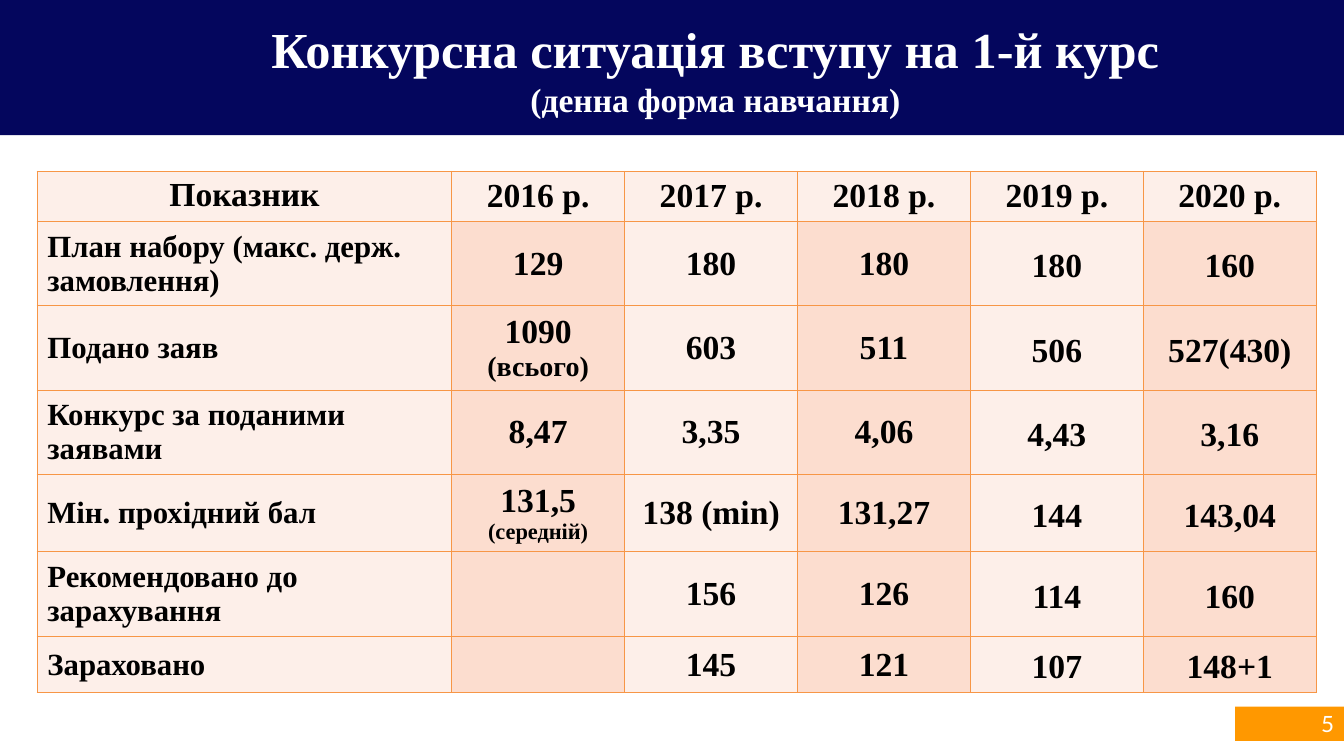
from dataclasses import dataclass

from lxml import etree
from pptx import Presentation
from pptx.dml.color import RGBColor
from pptx.enum.shapes import MSO_SHAPE
from pptx.enum.text import MSO_ANCHOR, PP_ALIGN
from pptx.oxml.ns import qn
from pptx.util import Inches, Pt

LEFT, CENTER, RIGHT = PP_ALIGN.LEFT, PP_ALIGN.CENTER, PP_ALIGN.RIGHT
TOP, MIDDLE = MSO_ANCHOR.TOP, MSO_ANCHOR.MIDDLE
RECT = MSO_SHAPE.RECTANGLE

NAVY = RGBColor(0x04, 0x06, 0x5D)
AMBER = RGBColor(0xFF, 0x98, 0x00)
ORANGE = RGBColor(0xF7, 0x96, 0x46)
PALE = RGBColor(0xFD, 0xEF, 0xE9)
PEACH = RGBColor(0xFC, 0xDD, 0xCF)
WHITE = RGBColor(0xFF, 0xFF, 0xFF)
BLACK = RGBColor(0, 0, 0)
SERIF, SANS = "Times New Roman", "Lato"


@dataclass
class Box:
    left: float
    top: float
    width: float
    height: float

    def place(self) -> tuple:
        return tuple(map(Inches, (self.left, self.top, self.width, self.height)))


@dataclass
class Row:
    label: str
    height: float
    values: tuple[str, ...]
    note: str = ""
    small: int = 20


HEAD = ("Показник", "2016 р.", "2017 р.", "2018 р.", "2019 р.", "2020 р.")
HEAD_HEIGHT = 0.5
WIDTHS = [4.11] + [1.715] * 5
ROWS = [
    Row("План набору (макс. держ. замовлення)", 0.83,
        ("129", "180", "180", "180", "160")),
    Row("Подано заяв", 0.84,
        ("1090", "603", "511", "506", "527(430)"), "(всього)"),
    Row("Конкурс за поданими заявами", 0.83,
        ("8,47", "3,35", "4,06", "4,43", "3,16")),
    Row("Мін. прохідний бал", 0.76,
        ("131,5", "138 (min)", "131,27", "144", "143,04"), "(середній)", 16),
    Row("Рекомендовано до зарахування", 0.84,
        ("", "156", "126", "114", "160")),
    Row("Зараховано", 0.56,
        ("", "145", "121", "107", "148+1")),
]


def write(frame, text: str, *, size: float = 24, font: str = SERIF,
          color: RGBColor = BLACK, bold: bool = True, align=CENTER,
          spacing: float | None = None, more: bool = False) -> None:
    """Fill the first paragraph, or add another one when more is set."""
    para = frame.add_paragraph() if more else frame.paragraphs[0]
    para.alignment = align
    if spacing:
        para.line_spacing = spacing
    run = para.add_run()
    run.text = text
    run.font.size = Pt(size)
    run.font.name = font
    run.font.bold = bold
    run.font.color.rgb = color


def add_bar(slide, box: Box, color: RGBColor) -> None:
    bar = slide.shapes.add_shape(RECT, *box.place())
    bar.shadow.inherit = False
    bar.fill.solid()
    bar.fill.fore_color.rgb = color
    bar.line.fill.background()


def add_frame(slide, box: Box, anchor):
    frame = slide.shapes.add_textbox(*box.place()).text_frame
    frame.word_wrap = True
    frame.vertical_anchor = anchor
    return frame


def style_cell(cell, color: RGBColor, anchor=MIDDLE) -> None:
    """Set the anchor, the four borders and the fill."""
    cell.vertical_anchor = anchor
    props = cell._tc.get_or_add_tcPr()
    for side in ("a:lnL", "a:lnR", "a:lnT", "a:lnB"):
        line = etree.SubElement(props, qn(side), w=str(Pt(1)))
        fill = etree.SubElement(line, qn("a:solidFill"))
        etree.SubElement(fill, qn("a:srgbClr"), val=str(ORANGE))
    cell.fill.solid()
    cell.fill.fore_color.rgb = color


def add_grid(slide, box: Box) -> None:
    grid = slide.shapes.add_table(len(ROWS) + 1, len(HEAD), *box.place()).table
    grid.first_row = grid.horz_banding = False
    for col, width in zip(grid.columns, WIDTHS):
        col.width = Inches(width)
    grid.rows[0].height = Inches(HEAD_HEIGHT)
    for c, text in enumerate(HEAD):
        cell = grid.cell(0, c)
        style_cell(cell, PALE, MIDDLE if c else TOP)
        write(cell.text_frame, text)
    for r, row in enumerate(ROWS, 1):
        grid.rows[r].height = Inches(row.height)
        for c, text in enumerate((row.label, *row.values)):
            cell = grid.cell(r, c)
            style_cell(cell, PEACH if c % 2 else PALE)
            if c == 0:
                write(cell.text_frame, text, size=22, align=LEFT)
            elif text:
                write(cell.text_frame, text, spacing=1.15 if c > 3 else None)
            if c == 1 and row.note:
                write(cell.text_frame, row.note, size=row.small, more=True)


def main() -> None:
    deck = Presentation()
    deck.slide_width, deck.slide_height = Inches(13.33), Inches(7.5)
    slide = deck.slides.add_slide(deck.slide_layouts[6])
    add_bar(slide, Box(12.25, 7.01, 1.08, 0.34), AMBER)
    add_bar(slide, Box(0, 0, 13.33, 1.34), NAVY)
    number = add_frame(slide, Box(12.07, 7.01, 1.26, 0.34), MIDDLE)
    write(number, "5", size=16, font=SANS, color=WHITE, bold=False, align=RIGHT)
    title = add_frame(slide, Box(1.15, 0.13, 11.89, 1.11), TOP)
    write(title, "Конкурсна ситуація вступу на 1-й курс", size=36, color=WHITE)
    write(title, "(денна форма навчання)", color=WHITE, more=True)
    add_grid(slide, Box(0.37, 1.7, 12.68, 5.16))
    deck.save("out.pptx")


if __name__ == "__main__":
    main()
